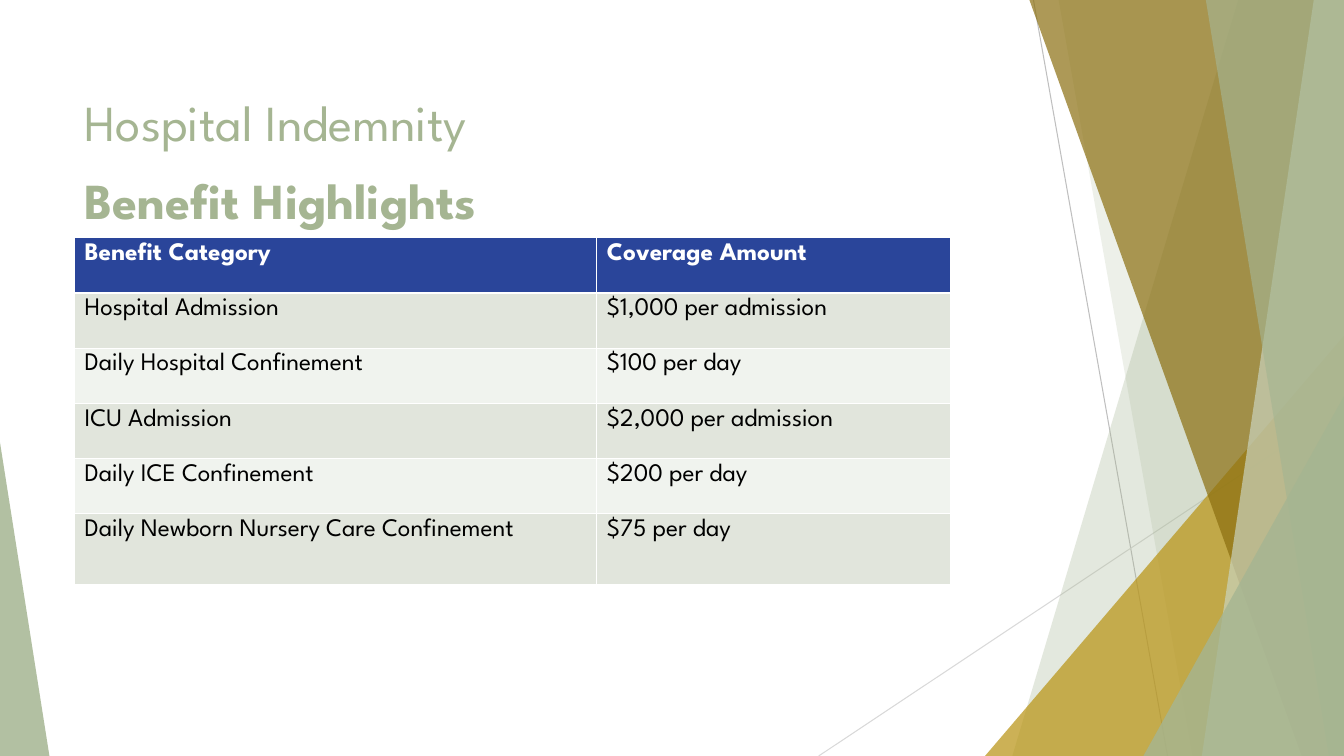
from lxml.etree import SubElement
from pptx import Presentation
from pptx.dml.color import RGBColor
from pptx.enum.shapes import MSO_CONNECTOR, MSO_SHAPE
from pptx.enum.text import MSO_ANCHOR, PP_ALIGN
from pptx.oxml.ns import qn
from pptx.util import Inches, Pt

WIDE, HIGH = 13.33, 7.5
FONT = "League Spartan"
HEX = {
    "sage": "A5B592", "mist": "C9D3BE", "gold": "B99415", "bronze": "8B6F10",
    "gray": "BFBFBF", "silver": "D9D9D9", "navy": "2A459A", "white": "FFFFFF",
    "black": "000000", "dark": "E1E5DC", "light": "F0F3EE",
}
LINES = [((10.25, 0), (11.58, HIGH), "gray"),
         ((WIDE, 4.03), (8.12, HIGH), "silver")]
# Bands: x on the top edge, x on the bottom edge, colour, opacity
BACK = [(12.28, 10.04, "sage", 30), (10.5, 11.83, "sage", 20)]
FRONT = [(10.21, 12.91, "bronze", 70), (13.03, 11.92, "mist", 70),
         (11.96, 13.18, "sage", 65)]
ROWS = [
    ("Benefit Category", "Coverage Amount"),
    ("Hospital Admission", "$1,000 per admission"),
    ("Daily Hospital Confinement", "$100 per day"),
    ("ICU Admission", "$2,000 per admission"),
    ("Daily ICE Confinement", "$200 per day"),
    ("Daily Newborn Nursery Care Confinement", "$75 per day"),
]


def color(name):
    return RGBColor.from_string(HEX[name])


def paint(shape, name, alpha):
    """Fill a shape with a see-through colour and no outline."""
    shape.shadow.inherit = False
    shape.line.fill.background()
    shape.fill.solid()
    shape.fill.fore_color.rgb = color(name)
    tint = shape.fill._xPr.find(qn("a:solidFill"))[0]
    SubElement(tint, qn("a:alpha")).set("val", str(alpha * 1000))


def add_line(slide, start, end, name):
    line = slide.shapes.add_connector(
        MSO_CONNECTOR.STRAIGHT, *(Inches(n) for n in start + end))
    line.line.color.rgb = color(name)
    line.line.width = Pt(0.75)
    SubElement(line._element.spPr, qn("a:effectLst"))


def add_band(slide, top, low, name, alpha):
    """Draw a full-height band that runs to the right edge of the slide."""
    pen = slide.shapes.build_freeform(Inches(top), 0)
    pen.add_line_segments([(Inches(x), Inches(y)) for x, y in
                           ((WIDE, 0), (WIDE, HIGH), (low, HIGH))])
    paint(pen.convert_to_shape(), name, alpha)


def add_corner(slide, left, top, wide, tip, name, alpha):
    """Draw a triangle that stands on the bottom edge of the slide."""
    shape = slide.shapes.add_shape(
        MSO_SHAPE.ISOSCELES_TRIANGLE, Inches(left), Inches(top),
        Inches(wide), Inches(HIGH - top))
    shape.adjustments[0] = tip
    paint(shape, name, alpha)


def add_decor(slide):
    for line in LINES:
        add_line(slide, *line)
    for band in BACK:
        add_band(slide, *band)
    add_corner(slide, 9.77, 3.33, 3.56, 1, "gold", 72)
    for band in FRONT:
        add_band(slide, *band)
    add_corner(slide, 11.34, 3.93, 1.99, 1, "sage", 80)
    add_corner(slide, 0, 4.39, 0.49, 0, "sage", 85)


def add_title(slide, left, top, wide, high):
    title = slide.shapes.title
    title.left, title.top = Inches(left), Inches(top)
    title.width, title.height = Inches(wide), Inches(high)
    frame = title.text_frame
    frame.word_wrap = True
    frame.vertical_anchor = MSO_ANCHOR.TOP
    para = frame.paragraphs[0]
    para.alignment = PP_ALIGN.LEFT
    para.line_spacing = 1.3
    para.add_run().text = "Hospital Indemnity"
    para.add_line_break()
    strong = para.add_run()
    strong.text = "Benefit Highlights"
    strong.font.bold = True
    for run in para.runs:
        run.font.name = FONT
        run.font.size = Pt(36)
        run.font.color.rgb = color("sage")


def fill_cell(cell, text, fill, ink, bold):
    cell.text = text
    cell.fill.solid()
    cell.fill.fore_color.rgb = color(fill)
    font = cell.text_frame.paragraphs[0].font
    font.name, font.size, font.bold = FONT, Pt(18), bold
    font.color.rgb = color(ink)


def add_benefits(slide, left, top, wide, high):
    table = slide.shapes.add_table(
        len(ROWS), 2, Inches(left), Inches(top),
        Inches(wide), Inches(high)).table
    first, last = 5.18, 0.7
    table.columns[0].width = Inches(first)
    table.columns[1].width = Inches(wide - first)
    step = (high - last) / (len(ROWS) - 1)
    for i, texts in enumerate(ROWS):
        table.rows[i].height = Inches(last if i == len(ROWS) - 1 else step)
        head = i == 0
        fill = "navy" if head else "dark" if i % 2 else "light"
        for j, text in enumerate(texts):
            fill_cell(table.cell(i, j), text, fill,
                      "white" if head else "black", head)


def main():
    deck = Presentation()
    deck.slide_width, deck.slide_height = Inches(WIDE), Inches(HIGH)
    slide = deck.slides.add_slide(deck.slide_layouts.get_by_name("Title Only"))
    add_decor(slide)
    add_title(slide, 0.74, 0.67, 9.4, 1.44)
    add_benefits(slide, 0.74, 2.36, 8.69, 3.44)
    deck.save("out.pptx")


if __name__ == "__main__":
    main()
